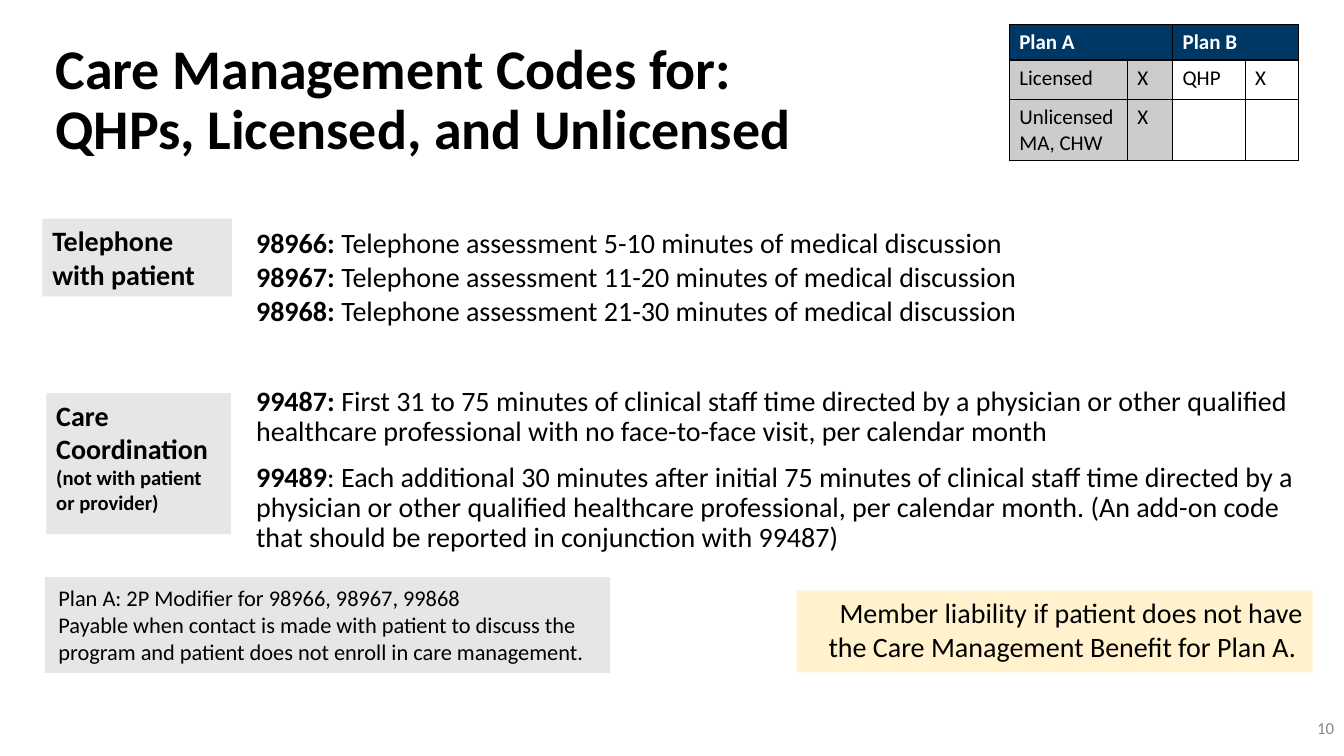
from dataclasses import dataclass

from lxml.etree import SubElement
from pptx import Presentation
from pptx.dml.color import RGBColor
from pptx.enum.shapes import MSO_SHAPE as Shape
from pptx.enum.text import MSO_ANCHOR as Anchor, MSO_AUTO_SIZE as AutoSize, PP_ALIGN as Align
from pptx.oxml.ns import qn
from pptx.util import Inches, Pt

FONT = "Calibri"
BLACK, WHITE, NAVY = "000000", "FFFFFF", "003865"
LIGHT_GRAY, MID_GRAY, NUMBER_GRAY, CREAM = "E7E6E6", "CCCCCC", "898989", "FFF2CC"


@dataclass
class Run:
    text: str
    bold: bool = False
    size: float | None = None


@dataclass
class Para:
    runs: list[Run]
    before: float = 0
    spacing: float = 1.0


@dataclass
class Panel:
    box: tuple[float, float, float, float]
    paras: list[Para]
    fill: str = LIGHT_GRAY
    line: str | None = None
    size: float = 20
    align: Align = Align.LEFT
    inset: tuple[float, float] = (0.1, 0.05)


def color(value: str) -> RGBColor:
    return RGBColor.from_string(value)


def plain(text: str, bold: bool = False, spacing: float = 1.0) -> Para:
    return Para([Run(text, bold)], spacing=spacing)


def code(number: str, meaning: str, before: float = 0, spacing: float = 1.0) -> Para:
    return Para([Run(number, True), Run(meaning)], before, spacing)


def write(frame, paras: list[Para], size: float = 20, ink: str = BLACK, align=Align.LEFT,
          anchor=Anchor.TOP, inset: tuple[float, float] = (0.1, 0.05)) -> None:
    frame.word_wrap = True
    frame.auto_size = AutoSize.NONE
    frame.vertical_anchor = anchor
    frame.margin_left = frame.margin_right = Inches(inset[0])
    frame.margin_top = frame.margin_bottom = Inches(inset[1])
    for index, para in enumerate(paras):
        paragraph = frame.add_paragraph() if index else frame.paragraphs[0]
        paragraph.alignment = align
        paragraph.line_spacing = para.spacing
        paragraph.space_before = Pt(para.before)
        paragraph.space_after = Pt(0)
        for part in para.runs:
            run = paragraph.add_run()
            run.text = part.text
            run.font.name = FONT
            run.font.size = Pt(part.size or size)
            run.font.bold = part.bold
            run.font.color.rgb = color(ink)


def place(shape, box: tuple[float, float, float, float]) -> None:
    shape.left, shape.top, shape.width, shape.height = map(Inches, box)


def remove_bullets(frame) -> None:
    for paragraph in frame.paragraphs:
        properties = paragraph._p.get_or_add_pPr()
        properties.set("marL", "0")
        properties.set("indent", "0")
        SubElement(properties, qn("a:buNone"))


def draw_panel(slide, panel: Panel) -> None:
    shape = slide.shapes.add_shape(Shape.RECTANGLE, *map(Inches, panel.box))
    shape.shadow.inherit = False
    shape.fill.solid()
    shape.fill.fore_color.rgb = color(panel.fill)
    if panel.line:
        shape.line.color.rgb = color(panel.line)
        shape.line.width = Pt(0.75)
    else:
        shape.line.fill.background()
    write(shape.text_frame, panel.paras, size=panel.size, align=panel.align, inset=panel.inset)


def border_cell(cell) -> None:
    properties = cell._tc.get_or_add_tcPr()
    for side in ("a:lnL", "a:lnR", "a:lnT", "a:lnB"):
        edge = SubElement(properties, qn(side), w=str(Pt(1)))
        SubElement(SubElement(edge, qn("a:solidFill")), qn("a:srgbClr"), val=BLACK)


def draw_payer_table(slide) -> None:
    columns, heights = (1.17, 0.45, 0.72, 0.53), (0.34, 0.39, 0.59)
    rows = (
        ("Plan A", "", "Plan B", ""),
        ("Licensed", "X", "QHP", "X"),
        ("Unlicensed\nMA, CHW", "X", "", ""),
    )
    table = slide.shapes.add_table(len(rows), len(columns), Inches(10.01), Inches(0.24),
                                   Inches(sum(columns)), Inches(sum(heights))).table
    for column, width in zip(table.columns, columns):
        column.width = Inches(width)
    for r, (height, texts) in enumerate(zip(heights, rows)):
        table.rows[r].height = Inches(height)
        for c, text in enumerate(texts):
            cell, header = table.cell(r, c), r == 0
            border_cell(cell)
            cell.fill.solid()
            cell.fill.fore_color.rgb = color(NAVY if header else MID_GRAY if c < 2 else WHITE)
            if text:
                write(cell.text_frame, [plain(line, header) for line in text.split("\n")],
                      size=15, ink=WHITE if header else BLACK)
    for first in (0, 2):
        table.cell(0, first).merge(table.cell(0, first + 1))


CODES = [
    code("98966:", " Telephone assessment 5-10 minutes of medical discussion"),
    code("98967:", " Telephone assessment 11-20 minutes of medical discussion"),
    code("98968:", " Telephone assessment 21-30 minutes of medical discussion"),
    code("99487:", " First 31 to 75 minutes of clinical staff time directed by a physician or other "
         "qualified healthcare professional with no face-to-face visit, per calendar month",
         before=43.4, spacing=0.9),
    code("99489", ": Each additional 30 minutes after initial 75 minutes of clinical staff time "
         "directed by a physician or other qualified healthcare professional, per calendar month. "
         "(An add-on code that should be reported in conjunction with 99487)",
         before=10.7, spacing=0.9),
]

PANELS = [
    Panel((0.42, 2.17, 1.88, 0.77), [plain("Telephone with patient", True)]),
    Panel((0.46, 3.9, 1.83, 1.4), [Para([Run("Care Coordination ", True),
                                         Run("(not with patient or provider)", True, 14.7)])]),
    Panel((7.9, 5.86, 5.12, 0.81),
          [plain("Member liability if patient does not have the Care Management Benefit for Plan A. ")],
          fill=CREAM, align=Align.RIGHT),
    Panel((0.45, 5.73, 5.6, 0.94),
          [plain("Plan A: 2P Modifier for 98966, 98967, 99868"),
           plain("Payable when contact is made with patient to discuss the program and patient "
                 "does not enroll in care management.")],
          line=LIGHT_GRAY, size=16, inset=(0.13, 0.07)),
]


def main() -> None:
    deck = Presentation()
    deck.slide_width, deck.slide_height = Inches(13.33), Inches(7.5)
    slide = deck.slides.add_slide(deck.slide_layouts[1])

    # Title and billing codes
    heading, codes = slide.shapes.title, slide.placeholders[1]
    place(heading, (0.45, 0.4, 8.11, 1.21))
    write(heading.text_frame,
          [plain("Care Management Codes for: QHPs, Licensed, and Unlicensed", True, 0.9)],
          size=40, anchor=Anchor.MIDDLE)
    place(codes, (2.44, 2.19, 10.59, 3.66))
    write(codes.text_frame, CODES)
    remove_bullets(codes.text_frame)

    # Category labels and payer notes
    for panel in PANELS:
        draw_panel(slide, panel)

    # Payer table
    draw_payer_table(slide)

    # Page number
    page_number = slide.shapes.add_textbox(*map(Inches, (10.33, 7.09, 3, 0.4)))
    write(page_number.text_frame, [plain("10", spacing=0.9)], size=12, ink=NUMBER_GRAY,
          align=Align.RIGHT)

    deck.save("out.pptx")


if __name__ == "__main__":
    main()
